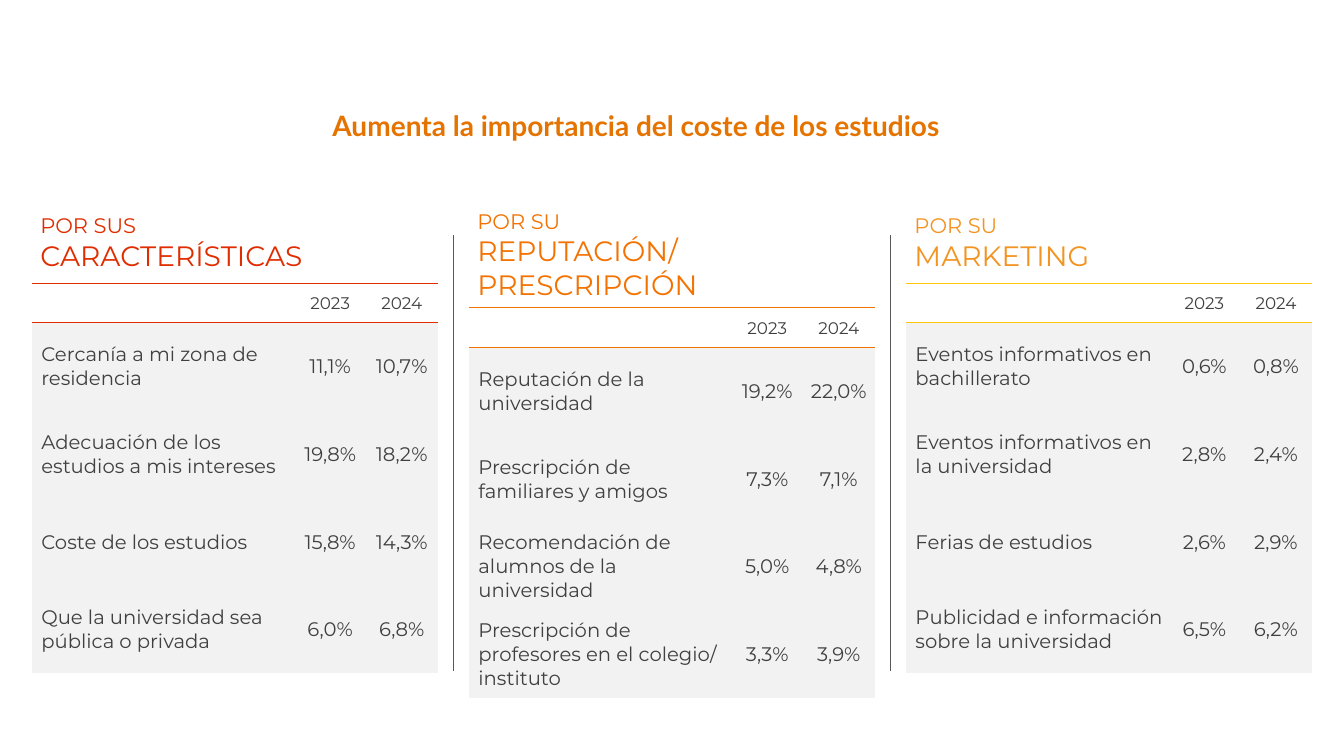
"""Build the slide on the reasons for choosing a university, 2023 against 2024."""
from lxml import etree
from pptx import Presentation
from pptx.dml.color import RGBColor
from pptx.enum import shapes, text
from pptx.oxml.ns import qn
from pptx.util import Inches, Pt

TITLE = "Aumenta la importancia del coste de los estudios"
YEARS = ("", "2023", "2024")
GROUPS = [
    ("POR SUS", "CARACTERÍSTICAS", "E02D00", "E02D00", [
        ("Cercanía a mi zona de residencia", "11,1%", "10,7%"),
        ("Adecuación de los estudios a mis intereses", "19,8%", "18,2%"),
        ("Coste de los estudios", "15,8%", "14,3%"),
        ("Que la universidad sea pública o privada", "6,0%", "6,8%"),
    ]),
    ("POR SU", "REPUTACIÓN/ PRESCRIPCIÓN", "F37201", "F37201", [
        ("Reputación de la universidad", "19,2%", "22,0%"),
        ("Prescripción de familiares y amigos", "7,3%", "7,1%"),
        ("Recomendación de alumnos de la universidad", "5,0%", "4,8%"),
        ("Prescripción de profesores en el colegio/ instituto", "3,3%", "3,9%"),
    ]),
    ("POR SU", "MARKETING", "F39322", "FFC509", [
        ("Eventos informativos en bachillerato", "0,6%", "0,8%"),
        ("Eventos informativos en la universidad", "2,8%", "2,4%"),
        ("Ferias de estudios", "2,6%", "2,9%"),
        ("Publicidad e información sobre la universidad", "6,5%", "6,2%"),
    ]),
]

THEME = {
    "title": "E57300", "body": "404040", "band": "F2F2F2", "divider": "595959",
    "title_font": "Lato", "body_font": "Montserrat",
    "title_size": 20, "kicker_size": 15, "heading_size": 20, "year_size": 12, "body_size": 14,
}
NO_GRID_STYLE = "{2D5ABB26-0587-4C30-8999-92F81FD0307C}"
LEFT, TOP, PITCH = 0.32, 2.02, 4.335
COLUMNS = (2.6, 0.71, 0.71)
ROWS = (0.79, 0.39, 0.87, 0.87, 0.87, 0.87)
DIVIDER_LEFT, DIVIDER_TOP, DIVIDER_BOTTOM = 4.5, 2.33, 6.66


def style_font(font, name, size, color, bold=False):
    font.name, font.size, font.bold = name, Pt(size), bold
    font.color.rgb = RGBColor.from_string(color)


def set_margins(cell, left, top, right, bottom):
    cell.margin_left, cell.margin_top = Inches(left), Inches(top)
    cell.margin_right, cell.margin_bottom = Inches(right), Inches(bottom)
    cell.vertical_anchor = text.MSO_ANCHOR.MIDDLE


def add_border(cell, side, color):
    line = etree.Element(qn(f"a:ln{side}"), w=str(Pt(1)))
    fill = etree.SubElement(line, qn("a:solidFill"))
    etree.SubElement(fill, qn("a:srgbClr"), val=color)
    cell._tc.get_or_add_tcPr().insert(0, line)


def fill_heading(table, kicker, heading, color, rule):
    cell = table.cell(0, 0)
    for column in range(len(COLUMNS)):
        add_border(table.cell(0, column), "B", rule)
        add_border(table.cell(1, column), "T", rule)
    cell.merge(table.cell(0, len(COLUMNS) - 1))
    set_margins(cell, 0.08, 0.05, 0.08, 0.05)
    paragraph = cell.text_frame.paragraphs[0]
    for words, size in ((kicker, THEME["kicker_size"]), (heading, THEME["heading_size"])):
        run = paragraph.add_run()
        run.text = words
        style_font(run.font, THEME["body_font"], size, color)
        if words == kicker:
            paragraph.add_line_break()


def fill_cell(cell, words, column, size):
    set_margins(cell, 0.01 if column else 0.09, 0.01, 0.01, 0)
    paragraph = cell.text_frame.paragraphs[0]
    paragraph.text = words
    paragraph.alignment = text.PP_ALIGN.CENTER if column else text.PP_ALIGN.LEFT
    style_font(paragraph.font, THEME["body_font"], size, THEME["body"])


def add_group(slide, left, kicker, heading, color, rule, reasons):
    frame = slide.shapes.add_table(
        len(ROWS), len(COLUMNS), Inches(left), Inches(TOP), Inches(sum(COLUMNS)), Inches(sum(ROWS)))
    table = frame.table
    table.first_row = table.horz_banding = False
    table._tbl.tblPr.find(qn("a:tableStyleId")).text = NO_GRID_STYLE
    for column, width in zip(table.columns, COLUMNS):
        column.width = Inches(width)
    for row, height in zip(table.rows, ROWS):
        row.height = Inches(height)
    fill_heading(table, kicker, heading, color, rule)
    for row, values in enumerate([YEARS, *reasons], start=1):
        for column, words in enumerate(values):
            cell = table.cell(row, column)
            fill_cell(cell, words, column, THEME["year_size" if row == 1 else "body_size"])
            if row > 1:
                cell.fill.solid()
                cell.fill.fore_color.rgb = RGBColor.from_string(THEME["band"])


def add_divider(slide, left):
    divider = slide.shapes.add_connector(
        shapes.MSO_CONNECTOR.STRAIGHT,
        Inches(left), Inches(DIVIDER_TOP), Inches(left), Inches(DIVIDER_BOTTOM))
    divider.line.color.rgb = RGBColor.from_string(THEME["divider"])
    divider.line.width = Pt(0.75)
    etree.SubElement(divider._element.spPr, qn("a:effectLst"))


def add_title(slide):
    title = slide.shapes.title
    title.left, title.top = Inches(0.68), Inches(0.62)
    title.width, title.height = Inches(11.26), Inches(1.25)
    title.text_frame.text = TITLE
    title.text_frame.vertical_anchor = text.MSO_ANCHOR.MIDDLE
    paragraph = title.text_frame.paragraphs[0]
    paragraph.alignment = text.PP_ALIGN.CENTER
    style_font(paragraph.font, THEME["title_font"], THEME["title_size"], THEME["title"], bold=True)


def main():
    presentation = Presentation()
    presentation.slide_width, presentation.slide_height = Inches(13.33), Inches(7.5)
    slide = presentation.slides.add_slide(presentation.slide_layouts[5])
    add_title(slide)
    for index, group in enumerate(GROUPS):
        add_group(slide, LEFT + index * PITCH, *group)
    for index in range(len(GROUPS) - 1):
        add_divider(slide, DIVIDER_LEFT + index * PITCH)
    presentation.save("out.pptx")


if __name__ == "__main__":
    main()
